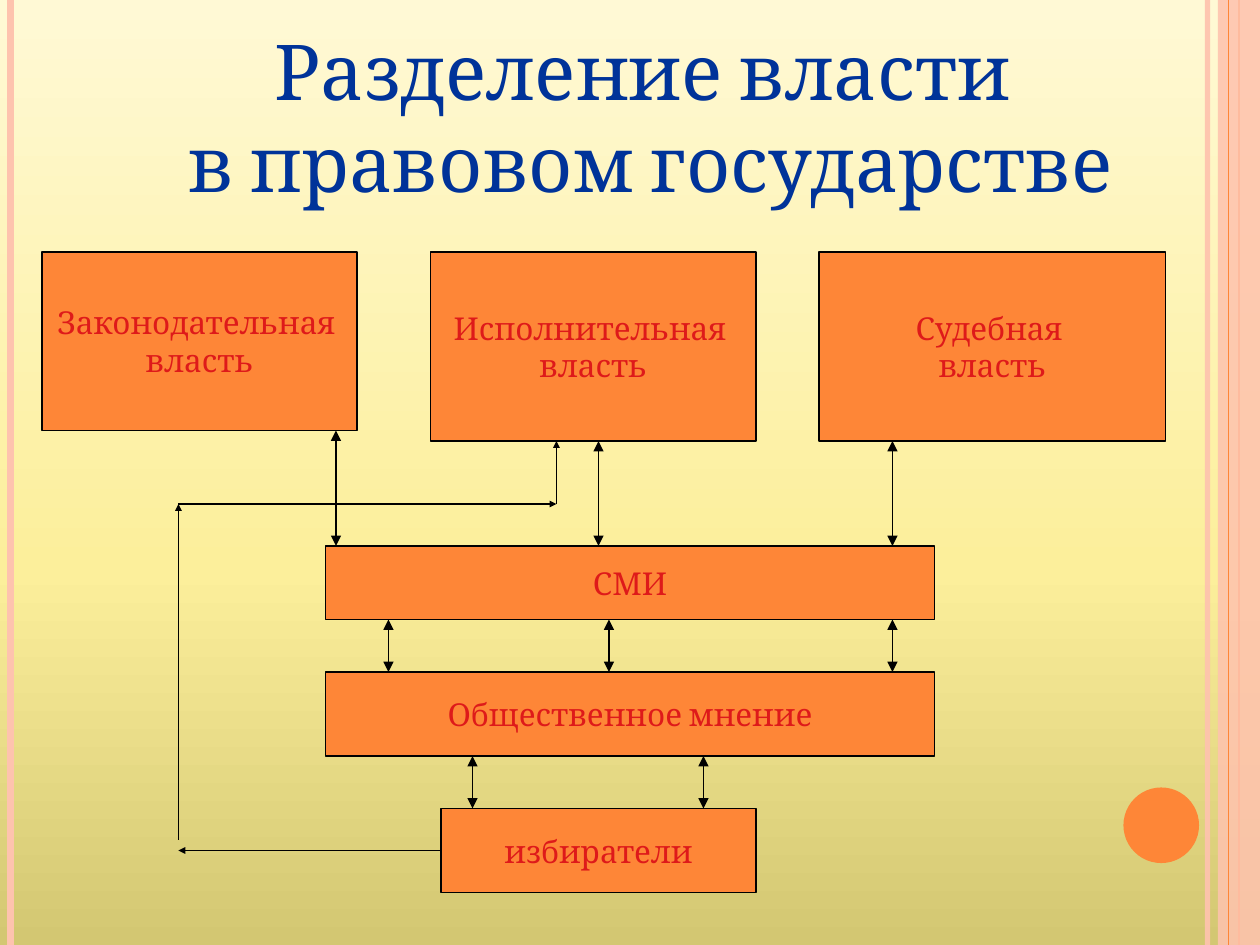
"""Build a slide on the separation of powers in a state governed by law."""
import copy
from dataclasses import dataclass

import pptx
import pptx.dml.color
import pptx.enum.shapes
import pptx.enum.text
import pptx.oxml
import pptx.oxml.ns
import pptx.util

Pt = pptx.util.Pt
SHAPES = pptx.enum.shapes.MSO_SHAPE
WIDTH, HEIGHT = 720, 540
FONT = "Cambria"
ORANGE, PINK, BLACK, RED, BLUE = "FE8637", "FEC3AE", "000000", "DE1A1A", "003399"


@dataclass
class Box:
    """A labelled rectangle, measured in points."""
    left: float
    top: float
    width: float
    height: float
    lines: list[str]

    @property
    def bottom(self) -> float:
        return self.top + self.height


def paint(colour_format, colour: str) -> None:
    """Apply a hex colour to a colour format."""
    colour_format.rgb = pptx.dml.color.RGBColor.from_string(colour)


def fill_solid(fill, colour: str, opacity: int = 100) -> None:
    """Give a fill one colour and an opacity in percent."""
    fill.solid()
    paint(fill.fore_color, colour)
    if opacity < 100:
        colour_element = fill._xPr.find(".//" + pptx.oxml.ns.qn("a:srgbClr"))
        alpha = pptx.oxml.parse_xml(
            f'<a:alpha {pptx.oxml.ns.nsdecls("a")} val="{opacity * 1000}"/>')
        colour_element.append(alpha)


def add_text(paragraph, text: str, size: float, colour: str) -> None:
    """Add one formatted run to a centred paragraph."""
    paragraph.alignment = pptx.enum.text.PP_ALIGN.CENTER
    run = paragraph.add_run()
    run.text = text
    run.font.size = Pt(size)
    run.font.name = FONT
    paint(run.font.color, colour)


def add_plain(slide, kind, left: float, top: float, width: float, height: float,
              colour: str, opacity: int = 100):
    """Draw a filled preset shape without outline or shadow."""
    shape = slide.shapes.add_shape(kind, Pt(left), Pt(top), Pt(width), Pt(height))
    shape.shadow.inherit = False
    fill_solid(shape.fill, colour, opacity)
    shape.line.fill.background()
    return shape


def add_box(slide, box: Box):
    """Draw a box with one paragraph for each line of its label."""
    shape = add_plain(slide, SHAPES.RECTANGLE, box.left, box.top,
                      box.width, box.height, ORANGE)
    fill_solid(shape.line.fill, BLACK)
    shape.line.width = Pt(1)
    frame = shape.text_frame
    frame.word_wrap = False
    frame.vertical_anchor = pptx.enum.text.MSO_ANCHOR.MIDDLE
    for index, line in enumerate(box.lines):
        paragraph = frame.add_paragraph() if index else frame.paragraphs[0]
        add_text(paragraph, line, 18, RED)
    return shape


def add_line(slide, start: tuple[float, float], end: tuple[float, float],
             colour: str = BLACK, width: float = 1, opacity: int = 100,
             heads: tuple[str, ...] = (), head_size: str = "med"):
    """Draw a straight line with optional triangular heads."""
    line = slide.shapes.add_connector(
        pptx.enum.shapes.MSO_CONNECTOR.STRAIGHT, *map(Pt, start + end))
    fill_solid(line.line.fill, colour, opacity)
    line.line.width = Pt(width)
    namespace = pptx.oxml.ns.nsdecls("a")
    outline = line.line._get_or_add_ln()
    for head in heads:
        outline.append(pptx.oxml.parse_xml(
            f'<a:{head} {namespace} type="triangle" w="{head_size}" len="{head_size}"/>'))
    line._element.spPr.append(pptx.oxml.parse_xml(f"<a:effectLst {namespace}/>"))
    return line


def set_background(slide) -> None:
    """Fill the background with a vertical three-stop gradient."""
    fill = slide.background.fill
    fill.gradient()
    fill.gradient_angle = 90
    stop_list = fill._fill._gradFill.gsLst
    stop_list.append(copy.deepcopy(stop_list[-1]))
    stops = ((0, "D3C772"), (0.4, "FCEF9B"), (1, "FFF9D5"))
    for stop, (position, colour) in zip(fill.gradient_stops, stops):
        stop.position = position
        paint(stop.color, colour)


def add_decor(slide) -> None:
    """Draw the edge stripes and the corner disc."""
    for x, colour, width, opacity in ((690, PINK, 3, 93), (6, PINK, 4.5, 100),
                                      (708, ORANGE, 1.5, 100)):
        add_line(slide, (x, 0), (x, HEIGHT), colour, width, opacity)
    add_plain(slide, SHAPES.RECTANGLE, 696, 0, 24, HEIGHT, PINK, 87)
    add_line(slide, (702, 0), (702, HEIGHT), ORANGE, 0.75)
    add_plain(slide, SHAPES.OVAL, 642, 450, 43.2, 43.2, ORANGE)


def add_title(slide) -> None:
    """Place and write the title."""
    title = slide.shapes.title
    title.left, title.top, title.width, title.height = map(Pt, (54, 18, 636, 96))
    frame = title.text_frame
    frame.word_wrap = True
    frame.auto_size = pptx.enum.text.MSO_AUTO_SIZE.NONE
    frame.vertical_anchor = pptx.enum.text.MSO_ANCHOR.MIDDLE
    heading = frame.paragraphs[0]
    add_text(heading, "Разделение власти ", 44, BLUE)
    heading.add_line_break()
    add_text(heading, "в правовом государстве", 44, BLUE)


def main() -> None:
    """Assemble and save the slide."""
    deck = pptx.Presentation()
    deck.slide_width, deck.slide_height = Pt(WIDTH), Pt(HEIGHT)
    slide = deck.slides.add_slide(deck.slide_layouts[5])
    set_background(slide)
    add_decor(slide)
    add_title(slide)

    legislative = Box(24, 144, 180, 102, ["Законодательная ", "власть"])
    executive = Box(246, 144, 186, 108, ["Исполнительная ", "власть"])
    judicial = Box(468, 144, 198, 108, ["Судебная ", "власть"])
    media = Box(186, 312, 348, 42, ["СМИ"])
    opinion = Box(186, 384, 348, 48, ["Общественное мнение"])
    voters = Box(252, 462, 180, 48, ["избиратели"])
    for box in (legislative, executive, judicial, media, opinion):
        add_box(slide, box)
    voters_shape = add_box(slide, voters)

    exchanges = ((legislative, media, (192,)), (executive, media, (342,)),
                 (judicial, media, (510,)), (media, opinion, (222, 348, 510)),
                 (opinion, voters, (270, 402)))
    for upper, lower, positions in exchanges:
        for x in positions:
            add_line(slide, (x, upper.bottom), (x, lower.top),
                     heads=("headEnd", "tailEnd"))

    voters_middle = voters.top + voters.height / 2
    election_route = (
        ((voters.left, voters_middle), (102, voters_middle)),
        ((102, 480), (102, 288)),
        ((102, 288), (318, 288)),
        ((318, 288), (318, executive.bottom)),
    )
    route = [add_line(slide, start, end, heads=("tailEnd",), head_size="sm")
             for start, end in election_route]
    route[0].begin_connect(voters_shape, 1)

    deck.save("out.pptx")


if __name__ == "__main__":
    main()
